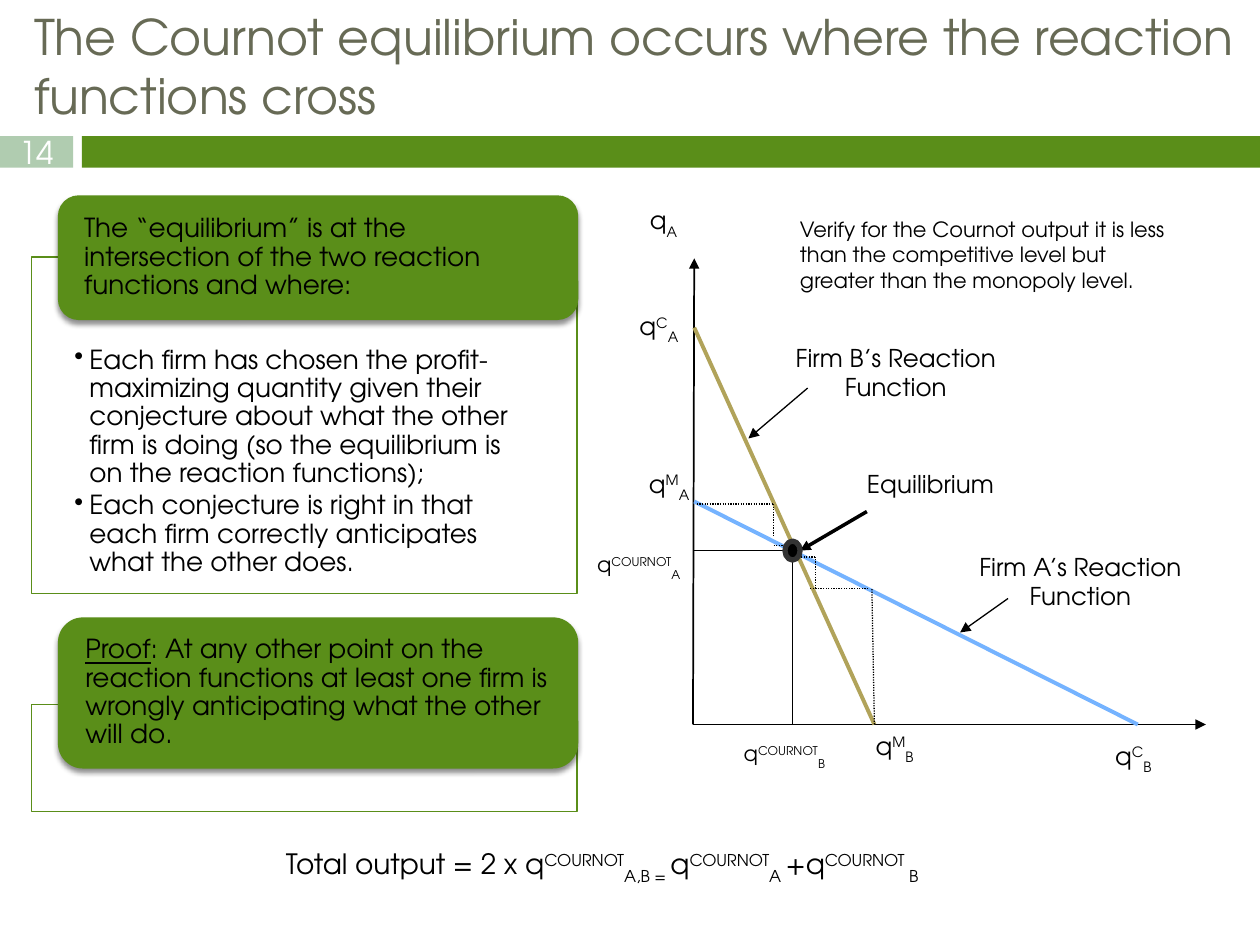
from lxml import etree
from pptx import Presentation
from pptx.dml.color import RGBColor
from pptx.enum.dml import MSO_LINE
from pptx.enum.shapes import MSO_CONNECTOR, MSO_SHAPE
from pptx.enum.text import MSO_ANCHOR, MSO_AUTO_SIZE, PP_ALIGN
from pptx.oxml.ns import qn
from pptx.util import Cm, Pt

LEFT, MID = PP_ALIGN.LEFT, PP_ALIGN.CENTER
TOP, CENTRE = MSO_ANCHOR.TOP, MSO_ANCHOR.MIDDLE
RECT, ROUND, OVAL = MSO_SHAPE.RECTANGLE, MSO_SHAPE.ROUNDED_RECTANGLE, MSO_SHAPE.OVAL
DOTS = MSO_LINE.ROUND_DOT
UP, DOWN, UNDER = 30, -30, "underline"

THEME = {
    "font": "TeX Gyre Adventor",
    "title": "676A55", "green": "5A8E19", "sage": "B0CCB0", "white": "FFFFFF",
    "black": "000000", "ring": "333333", "blue": "75B3FF", "gold": "B1A35A",
    "head": 28, "page": 18, "total": 16, "body": 15, "label": 14, "small": 12,
}


def sym(up, down):
    """Runs for the letter q with a superscript and a subscript."""
    return [("q", None), (up, UP), (down, DOWN)]


# All places are in inches: left, top, width, height.
TITLE = "The Cournot equilibrium occurs where the reaction functions cross"
BARS = [((0.65, 1.08, 9.35, 0.25), "green", ""), ((0, 1.08, 0.58, 0.25), "sage", "14")]
FRAMES = [
    ((0.25, 2.04, 4.33, 2.67), [
        "Each firm has chosen the profit-maximizing quantity given their conjecture about "
        "what the other firm is doing (so the equilibrium is on the reaction functions);",
        "Each conjecture is right in that each firm correctly anticipates what the other does.",
    ]),
    ((0.25, 5.59, 4.33, 0.85), []),
]
CARDS = [
    ((0.46, 1.55, 4.13, 0.99),
     [("The “equilibrium” is at the intersection of the two reaction functions and where:", None)]),
    ((0.46, 4.9, 4.13, 1.2),
     [("Proof", UNDER), (": At any other point on the reaction functions at least one firm is "
                         "wrongly anticipating what the other will do.", None)]),
]
LABELS = [
    ((7.67, 4.33, 1.81, 0.57), "label", MID, [("Firm A’s Reaction Function", None)]),
    ((6, 2.67, 2.22, 0.57), "label", MID, [("Firm B’s Reaction Function", None)]),
    ((6.58, 3.67, 1.61, 0.34), "label", MID, [("Equilibrium", None)]),
    ((5.06, 1.58, 0.47, 0.69), "label", LEFT, [("q", None), ("A", DOWN)]),
    ((4.75, 2.42, 0.96, 0.34), "label", MID, sym("C", "A")),
    ((4.92, 3.67, 0.78, 0.34), "label", MID, sym("M", "A")),
    ((4.58, 4.33, 0.98, 0.3), "small", MID, sym("COURNOT", "A")),
    ((5.63, 5.83, 1.19, 0.3), "small", MID, sym("COURNOT", "B")),
    ((6.71, 5.75, 0.78, 0.34), "label", MID, sym("M", "B")),
    ((8.56, 5.83, 0.87, 0.34), "label", MID, sym("C", "B")),
    ((6.25, 1.67, 3.25, 0.71), "small", LEFT,
     [("Verify for the Cournot output it is less than the competitive level but "
       "greater than the monopoly level.", None)]),
    ((2.17, 6.67, 7.33, 0.64), "total", LEFT,
     [("Total output = 2 x ", None)] + sym("COURNOT", "A,B = ")
     + sym("COURNOT", "A ") + [("+", None)] + sym("COURNOT", " B")),
]

AXIS, BASE = 5.51, 5.75            # x of the q_A axis, y of the q_B axis
EQ = (6.29, 4.37)                  # where the reaction functions cross
DOT = (0.12, 0.15)
ORIGIN, MONO = (5.5, BASE), (6.94, BASE)
# start, end, colour, width, arrow
LINES = [
    (ORIGIN, (AXIS, 2.05), "black", 1, True),
    (ORIGIN, (9.57, BASE), "black", 1, True),
    ((AXIS, 3.98), (9.03, BASE), "blue", 2.25, False),
    ((AXIS, 2.6), MONO, "gold", 2.25, False),
    ((8, 4.75), (7.62, 5.02), "black", 0.75, True),
    ((6.41, 3.08), (5.94, 3.48), "black", 0.75, True),
    ((6.88, 4.06), (6.35, EQ[1]), "black", 2, True),
    (EQ, (EQ[0], BASE), "black", 0.75, False),
    ((6.23, EQ[1]), (AXIS, EQ[1]), "black", 0.75, False),
]
STEPS = [
    ((5.53, 4), (6.14, 4)), ((6.14, 4), (6.14, 4.25)), ((6.14, 4.33), (6.27, 4.33)),
    (MONO, (6.92, 4.67)), ((6.89, 4.67), (6.42, 4.67)),
    ((6.47, 4.67), (6.47, 4.42)), ((6.47, 4.42), (6.34, 4.42)),
]


def size(*inches):
    return [Cm(2.54 * n) for n in inches]


def hue(name):
    return RGBColor.from_string(THEME[name])


def setup(frame, inset=(0.1, 0.05, 0.1, 0.05), anchor=TOP):
    frame.word_wrap = True
    frame.auto_size = MSO_AUTO_SIZE.NONE
    frame.vertical_anchor = anchor
    (frame.margin_left, frame.margin_top,
     frame.margin_right, frame.margin_bottom) = size(*inset)


def write(para, runs, kind, color="black", align=LEFT, pitch=1.0):
    para.alignment, para.line_spacing = align, pitch
    para.font.name, para.font.size = THEME["font"], Pt(THEME[kind])
    para.font.color.rgb = hue(color)
    for text, style in runs:
        run = para.add_run()
        run.text = text
        if style == UNDER:
            run.font.underline = True
        elif style:
            run.font._element.set("baseline", str(style * 1000))


def block(slide, kind, place, fill, line=None, width=0.79):
    shape = slide.shapes.add_shape(kind, *size(*place))
    shape.shadow.inherit = False
    shape.fill.solid()
    shape.fill.fore_color.rgb = hue(fill)
    if line:
        shape.line.color.rgb, shape.line.width = hue(line), Pt(width)
    else:
        shape.line.fill.background()
    return shape


def shade(shape):
    """Drop a soft shadow straight below the shape."""
    effects = shape._element.spPr.find(qn("a:effectLst"))
    outer = etree.SubElement(effects, qn("a:outerShdw"), blurRad=str(Pt(3)),
                             dist=str(Pt(2.4)), dir="5400000", rotWithShape="0")
    color = etree.SubElement(outer, qn("a:srgbClr"), val=THEME["black"])
    etree.SubElement(color, qn("a:alpha"), val="45000")


def bullet(para):
    props = para._p.get_or_add_pPr()
    hang = size(0.12)[0]
    props.set("marL", str(hang))
    props.set("indent", str(-hang))
    etree.SubElement(props, qn("a:buChar"), char="•")


def draw(slide, start, end, color, width, arrow=False, dash=None):
    line = slide.shapes.add_connector(MSO_CONNECTOR.STRAIGHT, *size(*start, *end))
    line.line.color.rgb, line.line.width = hue(color), Pt(width)
    if dash:
        line.line.dash_style = dash
    if arrow:
        etree.SubElement(line.line._get_or_add_ln(), qn("a:tailEnd"), type="triangle")
    etree.SubElement(line._element.spPr, qn("a:effectLst"))


def main():
    deck = Presentation()
    deck.slide_width, deck.slide_height = size(10, 7.5)
    slide = deck.slides.add_slide(deck.slide_layouts[5])

    title = slide.shapes.title
    title.left, title.top, title.width, title.height = size(0.17, 0, 10.08, 0.65)
    setup(title.text_frame)
    write(title.text_frame.paragraphs[0], [(TITLE, None)], "head", "title")

    for place, fill, text in BARS:
        bar = block(slide, RECT, place, fill)
        if text:
            setup(bar.text_frame, (0, 0, 0, 0), CENTRE)
            write(bar.text_frame.paragraphs[0], [(text, None)], "page", "white", MID)

    for place, points in FRAMES:
        frame = block(slide, RECT, place, "white", "green").text_frame
        setup(frame, (0.34, 0.71, 0.34, 0.12))
        for n, point in enumerate(points):
            para = frame.add_paragraph() if n else frame.paragraphs[0]
            para.space_after = Pt(2.25)
            bullet(para)
            write(para, [(point, None)], "body", pitch=0.9)

    for place, runs in CARDS:
        card = block(slide, ROUND, place, "green")
        shade(card)
        setup(card.text_frame, (0.16, 0, 0.16, 0), CENTRE)
        write(card.text_frame.paragraphs[0], runs, "body", pitch=0.9)

    for line in LINES:
        draw(slide, *line)
    for start, end in STEPS:
        draw(slide, start, end, "black", 0.75, dash=DOTS)
    corner = [mid - side / 2 for mid, side in zip(EQ, DOT)]
    block(slide, OVAL, (*corner, *DOT), "black", "ring", 3)

    for place, kind, align, runs in LABELS:
        frame = slide.shapes.add_textbox(*size(*place)).text_frame
        setup(frame)
        write(frame.paragraphs[0], runs, kind, align=align)

    deck.save("out.pptx")


if __name__ == "__main__":
    main()
